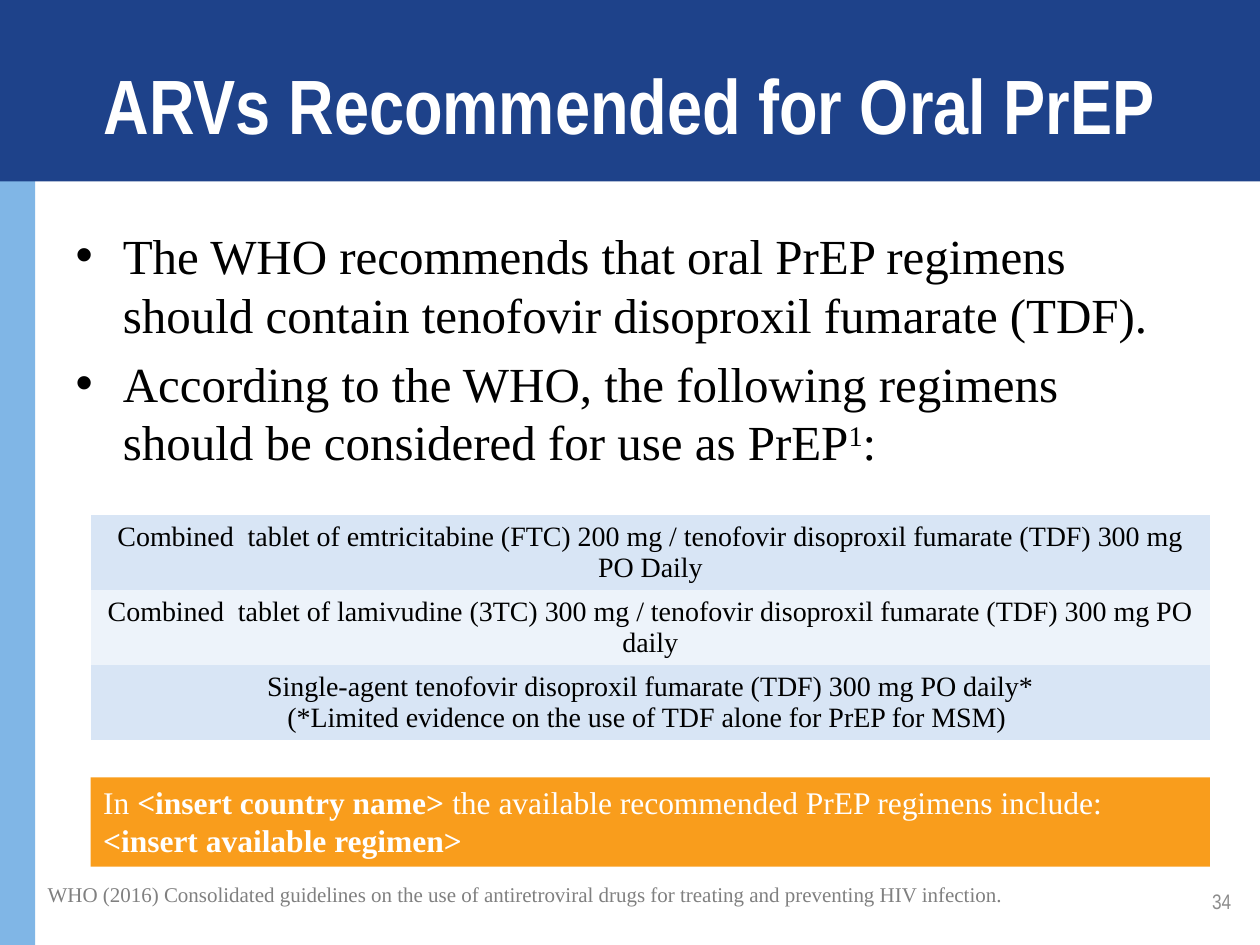
from dataclasses import dataclass

from lxml import etree
from pptx import Presentation
from pptx import util as u
from pptx.dml.color import RGBColor
from pptx.enum import shapes, text
from pptx.oxml import ns

COLOURS = {
    "navy": "1E428A",
    "sky": "80B6E6",
    "band": "D8E5F5",
    "pale": "EDF3FA",
    "orange": "F99D1C",
    "white": "FFFFFF",
    "black": "000000",
    "grey": "808080",
    "number": "8C8C8C",
}
SERIF = "Times New Roman"
NARROW = "Arial Narrow"


@dataclass(frozen=True)
class Area:
    left: float
    top: float
    width: float
    height: float

    def lengths(self) -> tuple:
        return tuple(u.Cm(side) for side in (self.left, self.top, self.width, self.height))


@dataclass(frozen=True)
class Span:
    words: str
    bold: bool = False
    raised: bool = False


@dataclass(frozen=True)
class Style:
    size: int
    colour: str
    font: str = SERIF
    align: text.PP_ALIGN = text.PP_ALIGN.LEFT


def colour(name: str) -> RGBColor:
    return RGBColor.from_string(COLOURS[name])


def write(frame, paragraphs: list[list[Span]], style: Style) -> None:
    for index, spans in enumerate(paragraphs):
        para = frame.paragraphs[0] if index == 0 else frame.add_paragraph()
        para.alignment = style.align
        for part in spans:
            span = para.add_run()
            span.text = part.words
            span.font.name = style.font
            span.font.size = u.Pt(style.size)
            span.font.bold = part.bold
            span.font.color.rgb = colour(style.colour)
            if part.raised:
                span.font._element.set("baseline", "30000")


def place(shape, area: Area) -> None:
    shape.left, shape.top, shape.width, shape.height = area.lengths()


def add_block(page, area: Area, fill: str):
    block = page.shapes.add_shape(shapes.MSO_SHAPE.RECTANGLE, *area.lengths())
    block.shadow.inherit = False
    block.fill.solid()
    block.fill.fore_color.rgb = colour(fill)
    block.line.fill.background()
    return block


def add_text(page, area: Area, words: str, style: Style, anchor: text.MSO_ANCHOR) -> None:
    box = page.shapes.add_textbox(*area.lengths())
    box.text_frame.word_wrap = True
    box.text_frame.vertical_anchor = anchor
    write(box.text_frame, [[Span(words)]], style)


def add_regimens(page, area: Area, regimens: list[list[str]]) -> None:
    table = page.shapes.add_table(len(regimens), 1, *area.lengths()).table
    table.first_row = False
    table.horz_banding = False
    for index, lines in enumerate(regimens):
        table.rows[index].height = u.Cm(area.height / len(regimens))
        cell = table.cell(index, 0)
        properties = cell._tc.get_or_add_tcPr()
        for edge in ("a:lnL", "a:lnR", "a:lnT", "a:lnB"):
            border = etree.SubElement(properties, ns.qn(edge), w="0")
            etree.SubElement(border, ns.qn("a:noFill"))
        cell.fill.solid()
        cell.fill.fore_color.rgb = colour("pale" if index % 2 else "band")
        write(cell.text_frame, [[Span(line)] for line in lines],
              Style(16, "black", align=text.PP_ALIGN.CENTER))


def main() -> None:
    deck = Presentation()
    deck.slide_width, deck.slide_height = u.Cm(25.4), u.Cm(19.05)
    page = deck.slides.add_slide(deck.slide_layouts[1])
    title, body = page.shapes.title, page.placeholders[1]

    for area, fill in (
        (Area(0, 3.33, 0.71, 15.72), "sky"),
        (Area(0, 0, 25.4, 3.66), "navy"),
    ):
        title.element.addprevious(add_block(page, area, fill).element)

    place(title, Area(1.27, 0.89, 22.86, 2.39))
    title.text_frame.vertical_anchor = text.MSO_ANCHOR.MIDDLE
    write(title.text_frame, [[Span("ARVs Recommended for Oral PrEP", bold=True)]],
          Style(44, "white", NARROW, text.PP_ALIGN.CENTER))

    place(body, Area(1.27, 4.42, 22.86, 13.59))
    write(body.text_frame, [
        [Span("The WHO recommends that oral PrEP regimens should contain "
              "tenofovir disoproxil fumarate (TDF).")],
        [Span("According to the WHO, the following regimens should be considered for use as PrEP"),
         Span("1", raised=True),
         Span(":")],
    ], Style(28, "black"))

    add_regimens(page, Area(1.83, 10.39, 22.56, 4.53), [
        ["Combined  tablet of emtricitabine (FTC) 200 mg / "
         "tenofovir disoproxil fumarate (TDF) 300 mg PO Daily"],
        ["Combined  tablet of lamivudine (3TC) 300 mg / "
         "tenofovir disoproxil fumarate (TDF) 300 mg PO daily"],
        ["Single-agent tenofovir disoproxil fumarate (TDF) 300 mg PO daily*",
         "(*Limited evidence on the use of TDF alone for PrEP for MSM) "],
    ])

    banner = add_block(page, Area(1.83, 15.67, 22.56, 1.8), "orange")
    banner.text_frame.word_wrap = True
    banner.text_frame.vertical_anchor = text.MSO_ANCHOR.TOP
    write(banner.text_frame, [[
        Span("In "),
        Span("<insert country name> ", bold=True),
        Span("the available recommended PrEP regimens include: "),
        Span("<insert available regimen>", bold=True),
    ]], Style(18, "white"))

    add_text(page, Area(0.71, 17.65, 23.83, 0.76),
             "WHO (2016) Consolidated guidelines on the use of antiretroviral drugs "
             "for treating and preventing HIV infection.",
             Style(12, "grey"), text.MSO_ANCHOR.TOP)
    add_text(page, Area(19.15, 17.65, 5.92, 1.02), "34",
             Style(12, "number", NARROW, text.PP_ALIGN.RIGHT), text.MSO_ANCHOR.MIDDLE)

    deck.save("out.pptx")


if __name__ == "__main__":
    main()
